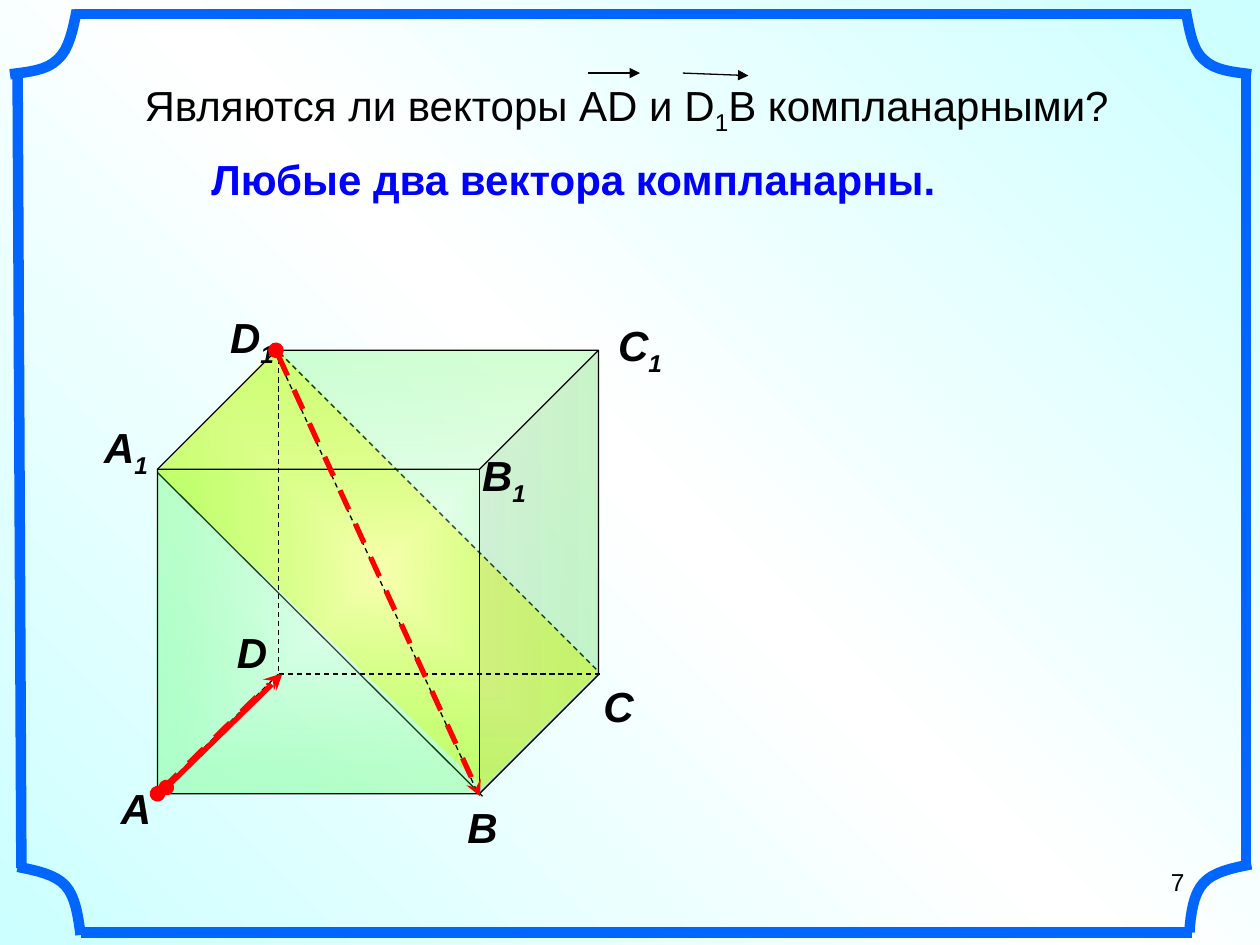
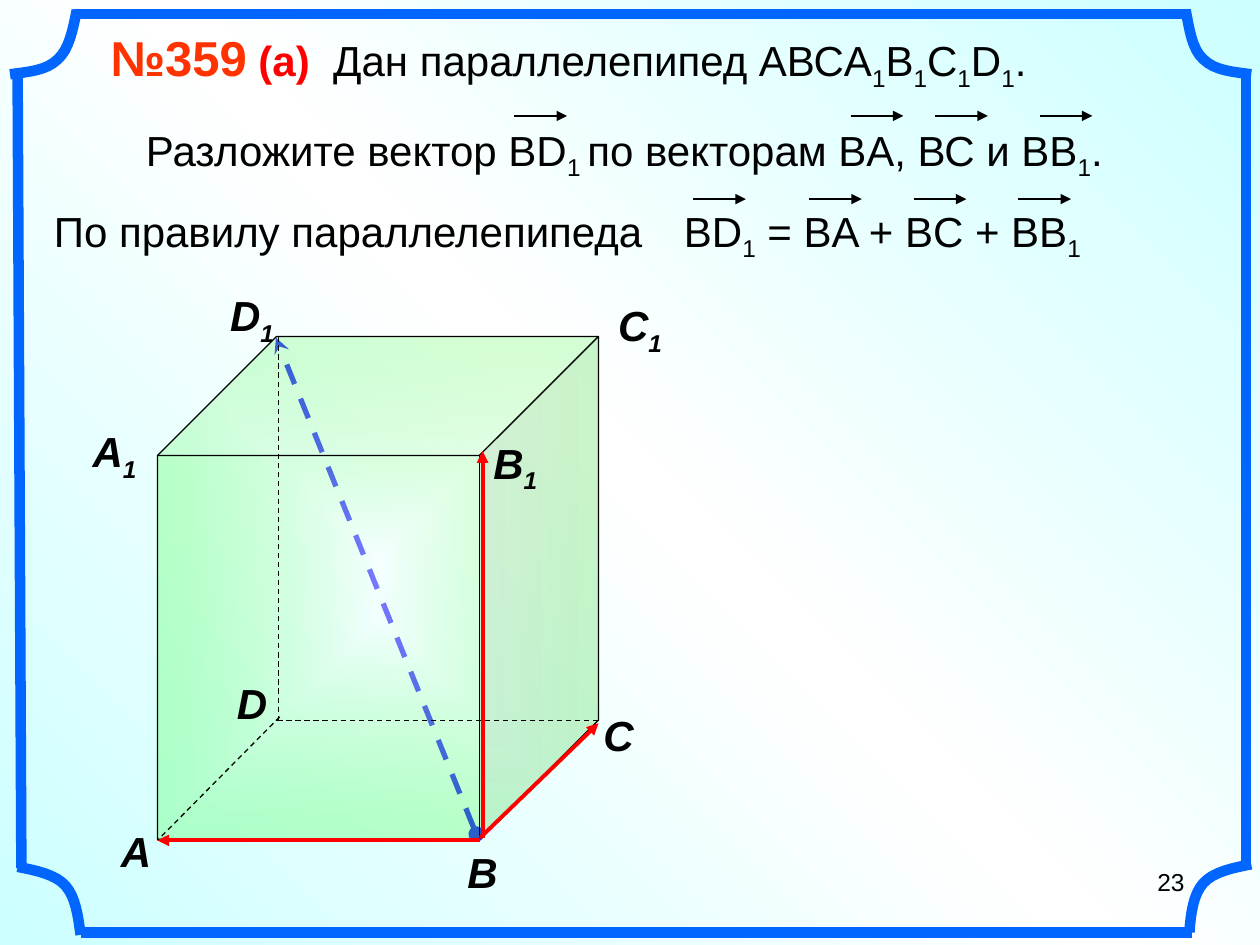
from pptx import Presentation
from pptx.dml.color import RGBColor
from pptx.enum.dml import MSO_LINE
from pptx.enum.shapes import MSO_CONNECTOR, MSO_SHAPE
from pptx.enum.text import MSO_AUTO_SIZE, PP_ALIGN
from pptx.oxml import parse_xml
from pptx.oxml.ns import nsdecls, qn
from pptx.util import Inches, Pt

BLACK = RGBColor(0x00, 0x00, 0x00)
RED = RGBColor(0xFF, 0x00, 0x00)
ORANGE = RGBColor(0xFF, 0x33, 0x00)
BLUE = RGBColor(0x00, 0x00, 0xFF)
VIOLET = RGBColor(0x33, 0x33, 0xFF)
BAND = RGBColor(0x00, 0x66, 0xFF)
YELLOW = RGBColor(0xFF, 0xFF, 0x00)
FONT = "Arial"

PAGE_FILL = f"""<a:gradFill {nsdecls('a')} rotWithShape="1"><a:gsLst>
<a:gs pos="0"><a:srgbClr val="CCFFFF"/></a:gs>
<a:gs pos="50000"><a:srgbClr val="FFFFFF"/></a:gs>
<a:gs pos="100000"><a:srgbClr val="CCFFFF"/></a:gs>
</a:gsLst><a:lin ang="18900000" scaled="1"/></a:gradFill>"""
CUBE_FILL = f"""<a:gradFill {nsdecls('a')} rotWithShape="1"><a:gsLst>
<a:gs pos="0"><a:srgbClr val="FFFFFF"><a:alpha val="33000"/></a:srgbClr></a:gs>
<a:gs pos="100000"><a:srgbClr val="00FF00"><a:alpha val="21000"/></a:srgbClr></a:gs>
</a:gsLst><a:path path="rect">
<a:fillToRect l="50000" t="50000" r="50000" b="50000"/></a:path></a:gradFill>"""


def link(slide, ends, color=BLACK, width=0.75, dash=False, head=None, tail=None):
    """Draw a straight line; head marks its start and tail its end."""
    line = slide.shapes.add_connector(
        MSO_CONNECTOR.STRAIGHT, *[Inches(v) for v in ends])
    line.line.color.rgb = color
    line.line.width = Pt(width)
    if dash:
        line.line.dash_style = MSO_LINE.DASH
    edge = line.line._get_or_add_ln()
    for tag, kind in (("headEnd", head), ("tailEnd", tail)):
        if kind:
            edge.append(parse_xml(f'<a:{tag} {nsdecls("a")} type="{kind}"/>'))
    line._element.spPr.append(parse_xml(f'<a:effectLst {nsdecls("a")}/>'))


def write(slide, box, *lines, size=24, color=BLACK, bold=False, italic=False, align=None):
    """Write lines of text; every second part between bars is a subscript."""
    area = slide.shapes.add_textbox(*[Inches(v) for v in box])
    frame = area.text_frame
    frame.word_wrap = True
    frame.auto_size = MSO_AUTO_SIZE.SHAPE_TO_FIT_TEXT
    for i, text in enumerate(lines):
        para = frame.add_paragraph() if i else frame.paragraphs[0]
        para.alignment = align
        for j, part in enumerate(text.split("|")):
            if not part:
                continue
            run = para.add_run()
            run.text = part
            font = run.font
            font.name, font.size = FONT, Pt(size)
            font.color.rgb = color
            font.bold, font.italic = bold, italic
            if j % 2:
                run._r.get_or_add_rPr().set("baseline", "-25000")
    return frame


deck = Presentation()
deck.slide_width, deck.slide_height = Inches(10), Inches(7.5)

# Shared background
master = deck.slide_master
master.background.fill.solid()
back = master._element.cSld.find(qn("p:bg")).find(qn("p:bgPr"))
back.replace(back.find(qn("a:solidFill")), parse_xml(PAGE_FILL))

# Shared frame: four sides and four curved corners
SIDES = [(0.59, 0.11, 9.45, 0.11), (0.64, 7.4, 9.46, 7.4),
         (9.89, 0.59, 9.89, 6.89), (0.14, 0.59, 0.17, 6.89)]
CORNERS = [
    [(0.14, 6.88), (0.29, 6.91), (0.44, 6.94), (0.52, 7.03), (0.6, 7.12), (0.62, 7.27), (0.64, 7.42)],
    [(9.93, 6.86), (9.78, 6.89), (9.63, 6.92), (9.55, 7.01), (9.47, 7.1), (9.45, 7.25), (9.44, 7.4)],
    [(9.41, 0.08), (9.44, 0.23), (9.46, 0.39), (9.55, 0.47), (9.64, 0.56), (9.78, 0.57), (9.93, 0.59)],
    [(0.61, 0.08), (0.58, 0.23), (0.55, 0.39), (0.46, 0.47), (0.37, 0.56), (0.23, 0.57), (0.08, 0.59)],
]
STEPS = 8

slides = []
for number in (7, 23):
    slide = deck.slides.add_slide(deck.slide_layouts[6])
    slides.append(slide)
    for side in SIDES:
        link(slide, side, BAND, 6)
    for knots in CORNERS:
        curve = []
        for k in (0, 3):
            for n in range(1, STEPS + 1):
                t = n / STEPS
                mix = ((1 - t) ** 3, 3 * t * (1 - t) ** 2, 3 * t * t * (1 - t), t ** 3)
                curve.append([Inches(sum(m * p[axis] for m, p in zip(mix, knots[k:k + 4])))
                              for axis in (0, 1)])
        pen = slide.shapes.build_freeform(*[Inches(v) for v in knots[0]])
        pen.add_line_segments(curve, close=False)
        corner = pen.convert_to_shape()
        corner.shadow.inherit = False
        corner.fill.background()
        corner.line.color.rgb = BAND
        corner.line.width = Pt(6)
    write(slide, (7.17, 6.83, 2.33, 0.52), str(number), size=14, align=PP_ALIGN.RIGHT)
first, second = slides

# Slide 1: cutting plane behind the cube
pen = first.shapes.build_freeform(Inches(4.75), Inches(5.33))
pen.add_line_segments([(Inches(x), Inches(y)) for x, y in
                       ((2.19, 2.76), (1.25, 3.75), (3.83, 6.25))])
plane = pen.convert_to_shape()
plane.shadow.inherit = False
plane.fill.solid()
plane.fill.fore_color.rgb = YELLOW
tint = plane._element.spPr.find(qn("a:solidFill"))[0]
tint.append(parse_xml(f'<a:alpha {nsdecls("a")} val="47000"/>'))
plane.line.fill.background()
link(first, (2.17, 2.75, 4.75, 5.33), dash=True)
link(first, (1.25, 3.75, 3.83, 6.32))

# Slide 2: diagonal vector behind the solid
link(second, (3.78, 6.62, 2.19, 2.68), VIOLET, 3, True, "oval", "stealth")

# Solids with their hidden edges and corner letters
SOLIDS = [
    (first, 2.78, 3.52,
     [(2.18, 2.79, 3.79, 6.29), (2.21, 2.78, 2.21, 5.35),
      (4.76, 5.35, 2.21, 5.35), (2.21, 5.35, 1.26, 6.29)],
     [("A", 0.75, 6.16), ("B", 3.5, 6.31), ("C", 4.58, 5.35), ("D", 1.67, 4.92),
      ("A|1", 0.67, 3.3), ("B|1", 3.67, 3.52), ("C|1", 4.75, 2.49), ("D|1", 1.67, 2.42)]),
    (second, 2.67, 3.99,
     [(2.21, 2.67, 2.21, 5.74), (4.75, 5.72, 2.19, 5.72), (2.22, 5.69, 1.25, 6.67)],
     [("A", 0.75, 6.5), ("В", 3.5, 6.67), ("С", 4.58, 5.58), ("D", 1.67, 5.33),
      ("A|1", 0.58, 3.33), ("B|1", 3.76, 3.42), ("C|1", 4.75, 2.33), ("D|1", 1.67, 2.25)]),
]
for slide, top, height, hidden, marks in SOLIDS:
    cube = slide.shapes.add_shape(
        MSO_SHAPE.CUBE, Inches(1.25), Inches(top), Inches(3.5), Inches(height))
    cube.adjustments[0] = 0.27
    cube.shadow.inherit = False
    cube.fill.solid()
    props = cube._element.spPr
    props.replace(props.find(qn("a:solidFill")), parse_xml(CUBE_FILL))
    cube.line.color.rgb = BLACK
    cube.line.width = Pt(0.75)
    for edge in hidden:
        link(slide, edge, dash=True)
    for mark, x, y in marks:
        write(slide, (x, y, 0.66, 0.5), mark, bold=True, italic=True, align=PP_ALIGN.CENTER)

# Slide 1: vectors
for ends, dash in (((2.19, 2.78, 3.81, 6.32), True),
                   ((1.25, 6.3, 2.22, 5.35), True),
                   ((1.32, 6.25, 2.24, 5.35), False)):
    link(first, ends, RED, 3, dash, "oval", "stealth")

# Slide 1: question and answer
write(first, (1.05, 0.58, 8.53, 0.5), "Являются ли векторы AD и D|1|B компланарными?")
for ends in ((4.67, 0.58, 5.08, 0.58), (5.42, 0.58, 5.94, 0.6)):
    link(first, ends, tail="triangle")
write(first, (1.58, 1.17, 7.25, 0.5), "Любые два вектора компланарны.", color=BLUE, bold=True)

# Slide 2: vectors from B
for ends in ((3.81, 6.65, 4.75, 5.74), (3.83, 6.65, 3.83, 3.58), (3.81, 6.67, 1.25, 6.67)):
    link(second, ends, RED, 2.25, tail="triangle")

# Slide 2: task
task = write(second, (0.78, 0.17, 9.05, 1.23),
             "№359|| ||(а)  ||Дан параллелепипед АВСA|1|B|1|C|1|D|1|.",
             "Разложите вектор BD|1 |по векторам BA, ВС и ВВ|1|.")
head, body = task.paragraphs
for spot, color, size in ((0, ORANGE, 28), (2, RED, 24)):
    font = head.runs[spot].font
    font.color.rgb, font.size, font.bold = color, Pt(size), True
body.space_before = Pt(18.4)
body._p.get_or_add_pPr().set("marL", str(Inches(0.28)))

# Slide 2: rule
write(second, (0.33, 1.58, 5, 0.5), "По правилу параллелепипеда")
write(second, (5.33, 1.58, 3.5, 0.5), "ВD|1| = BA + BC + BB|1")

# Slide 2: arrows above the vector names
for y, starts in ((0.92, (4.08, 6.75, 7.42, 8.25)), (1.58, (5.5, 6.42, 7.25, 8.08))):
    for x in starts:
        link(second, (x, y, x + 0.42, y), tail="triangle")

deck.save("out.pptx")
